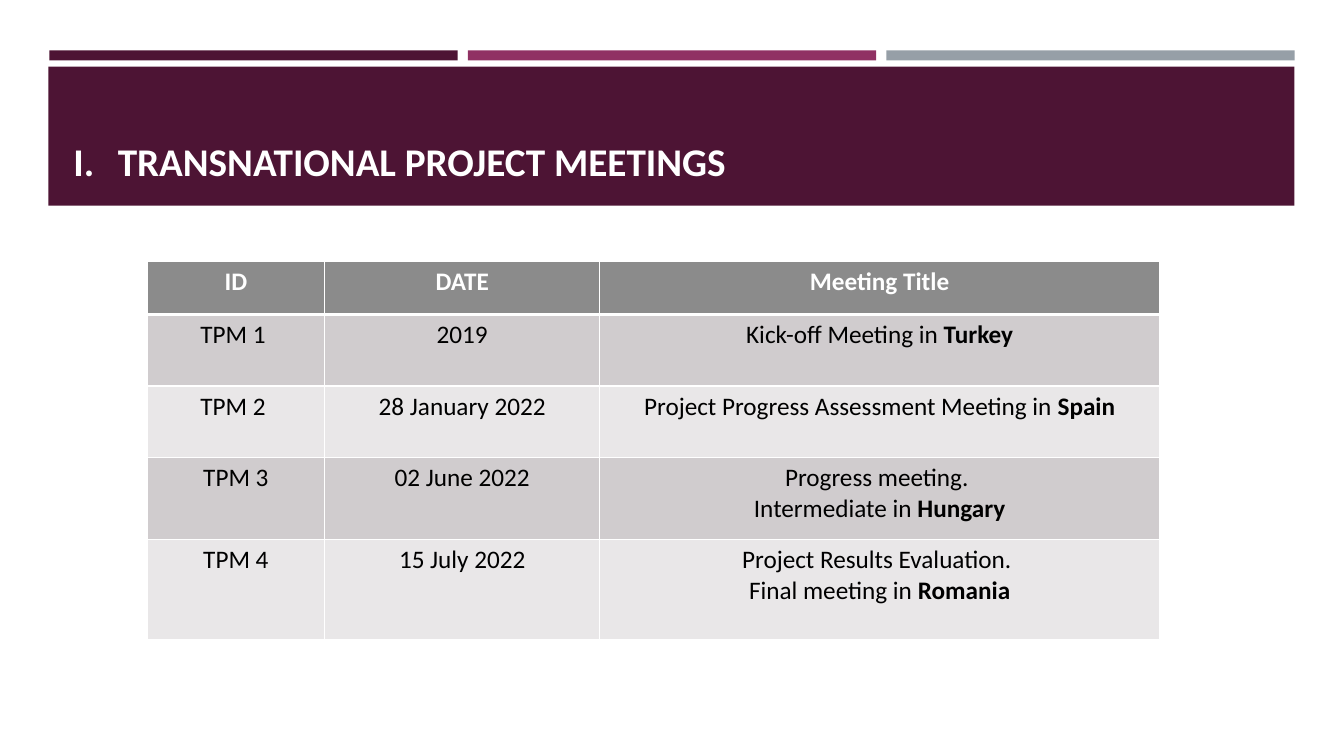
import pptx
import pptx.util
import pptx.dml.color
import pptx.enum.shapes
import pptx.enum.text
import pptx.oxml
import pptx.oxml.ns
from pptx.util import Inches

PLUM, MAGENTA, SLATE = "4D1434", "903163", "969FA7"
WHITE, BLACK = "FFFFFF", "000000"
HEADER_GREY, BAND_DARK, BAND_LIGHT = "8B8B8B", "D0CCCE", "E9E7E8"

COLUMN_WIDTHS = [1.76, 2.73, 5.55]
ROW_HEIGHTS = [0.53, 0.71, 0.71, 0.81, 1.0]

# Each cell is a list of paragraphs; each paragraph is a list of (text, bold) runs.
HEADINGS = [[[(name, True)]] for name in ("ID", "DATE", "Meeting Title")]
MEETINGS = [
    ("TPM 1 ", "2019", [[("Kick-off Meeting in ", False), ("Turkey", True)]]),
    ("TPM 2 ", "28 January 2022",
     [[("Project Progress Assessment Meeting in ", False), ("Spain", True)]]),
    ("TPM 3", "02 June 2022",
     [[("Progress meeting. ", False)],
      [("Intermediate in ", False), ("Hungary", True)]]),
    ("TPM 4", "15 July 2022",
     [[("Project Results Evaluation. ", False)],
      [("Final meeting in ", False), ("Romania", True)]]),
]


def color(value):
    return pptx.dml.color.RGBColor.from_string(value)


class PageBuilder:
    def __init__(self, page, font):
        self.page = page
        self.font = font

    def bar(self, left, top, width, height, fill):
        shape = self.page.shapes.add_shape(
            pptx.enum.shapes.MSO_SHAPE.RECTANGLE,
            Inches(left), Inches(top), Inches(width), Inches(height))
        shape.shadow.inherit = False
        shape.fill.solid()
        shape.fill.fore_color.rgb = color(fill)
        shape.line.fill.background()

    def span(self, para, text, size, ink, bold):
        span = para.add_run()
        span.text = text
        span.font.name = self.font
        span.font.size = pptx.util.Pt(size)
        span.font.color.rgb = color(ink)
        span.font.bold = bold

    def title(self, left, top, width, height, text):
        """Add a bottom-anchored heading with a Roman numeral."""
        box = self.page.shapes.add_textbox(
            Inches(left), Inches(top), Inches(width), Inches(height))
        frame = box.text_frame
        frame.word_wrap = True
        frame.vertical_anchor = pptx.enum.text.MSO_ANCHOR.BOTTOM
        para = frame.paragraphs[0]
        para.line_spacing = 0.9
        self.span(para, text, 28, WHITE, True)
        properties = para._p.get_or_add_pPr()
        properties.set("marL", str(Inches(0.44)))
        properties.set("indent", str(-Inches(0.44)))
        properties.append(pptx.oxml.parse_xml(
            f'<a:buFont {pptx.oxml.ns.nsdecls("a")} typeface="+mj-lt"/>'))
        properties.append(pptx.oxml.parse_xml(
            f'<a:buAutoNum {pptx.oxml.ns.nsdecls("a")} type="romanUcPeriod"/>'))

    def borders(self, cell, widths):
        """Draw white cell borders; widths maps each side to points."""
        properties = cell._tc.get_or_add_tcPr()
        for side, width in widths.items():
            properties.append(pptx.oxml.parse_xml(
                f'<a:ln{side} {pptx.oxml.ns.nsdecls("a")} w="{pptx.util.Pt(width)}">'
                f'<a:solidFill><a:srgbClr val="{WHITE}"/></a:solidFill></a:ln{side}>'))

    def cell(self, cell, paragraphs, fill, ink, top, bottom):
        self.borders(cell, {"L": 1, "R": 1, "T": top, "B": bottom})
        cell.fill.solid()
        cell.fill.fore_color.rgb = color(fill)
        frame = cell.text_frame
        for index, spans in enumerate(paragraphs):
            para = frame.add_paragraph() if index else frame.paragraphs[0]
            para.alignment = pptx.enum.text.PP_ALIGN.CENTER
            for text, bold in spans:
                self.span(para, text, 18, ink, bold)

    def table(self, left, top, widths, heights, rows):
        table = self.page.shapes.add_table(
            len(heights), len(widths), Inches(left), Inches(top),
            Inches(sum(widths)), Inches(sum(heights))).table
        for column, width in zip(table.columns, widths):
            column.width = Inches(width)
        for index, (height, row) in enumerate(zip(heights, rows)):
            table.rows[index].height = Inches(height)
            if index == 0:
                fill, ink = HEADER_GREY, WHITE
            else:
                fill, ink = (BAND_DARK if index % 2 else BAND_LIGHT), BLACK
            for column, paragraphs in enumerate(row):
                self.cell(table.cell(index, column), paragraphs, fill, ink,
                          top=3 if index == 1 else 1,
                          bottom=3 if index == 0 else 1)


def main():
    deck = pptx.Presentation()
    deck.slide_width, deck.slide_height = Inches(13.33), Inches(7.5)
    builder = PageBuilder(deck.slides.add_slide(deck.slide_layouts[6]), "Calibri")

    for index, fill in enumerate((PLUM, MAGENTA, SLATE)):
        builder.bar(0.49 + 4.15 * index, 0.5, 4.05, 0.1, fill)
    builder.bar(0.48, 0.66, 12.36, 1.38, PLUM)
    builder.title(0.63, 0.8, 12.06, 1.08, "TRANSNATIONAL PROJECT MEETINGS")

    rows = [HEADINGS] + [
        [[[(code, False)]], [[(date, False)]], meeting]
        for code, date, meeting in MEETINGS]
    builder.table(1.46, 2.59, COLUMN_WIDTHS, ROW_HEIGHTS, rows)
    deck.save("out.pptx")


if __name__ == "__main__":
    main()
